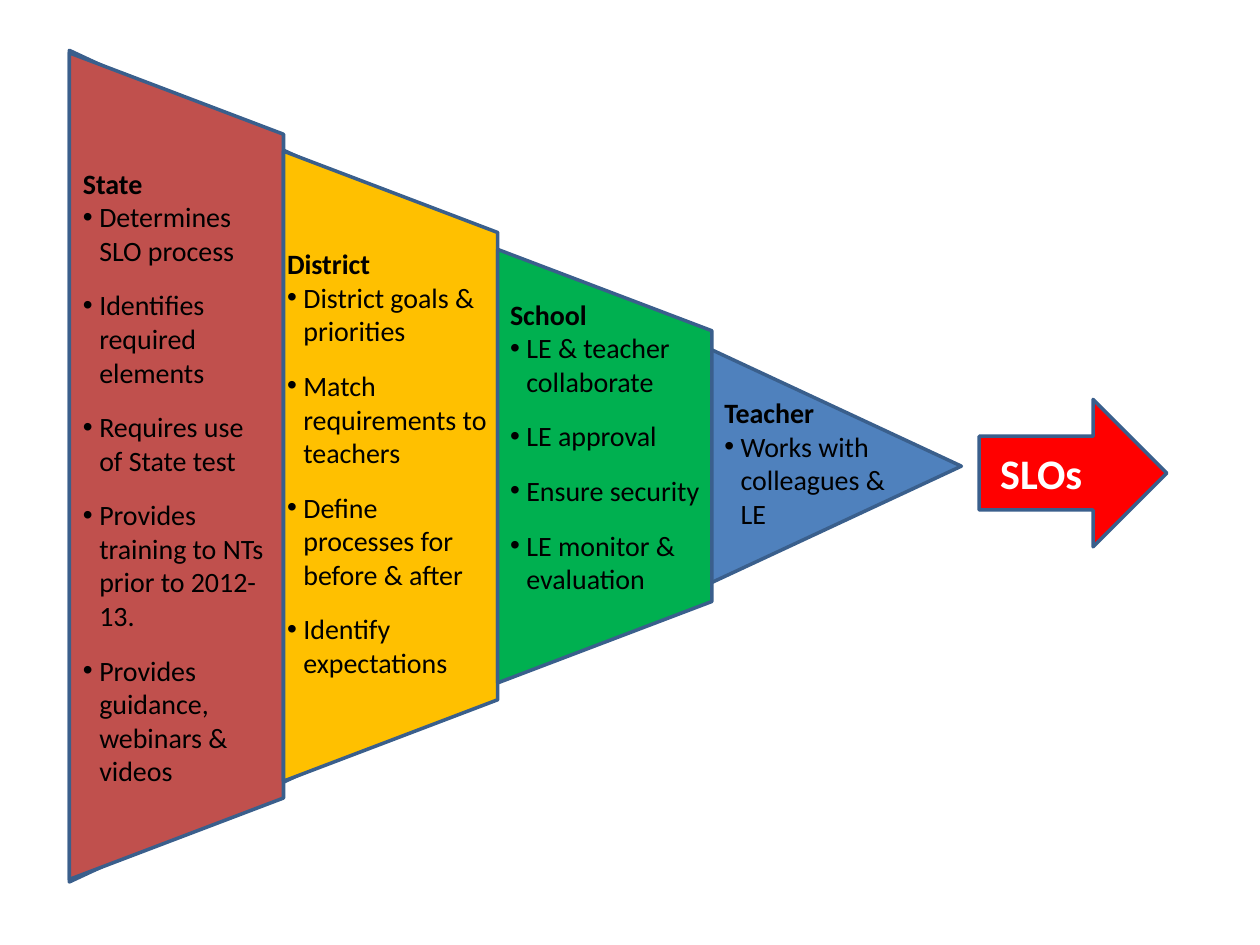
from lxml.etree import SubElement
from pptx import Presentation
from pptx.dml.color import RGBColor
from pptx.enum.shapes import MSO_SHAPE as Shape
from pptx.enum.text import MSO_AUTO_SIZE as AutoSize
from pptx.oxml.ns import qn
from pptx.util import Inches, Pt

BLACK = RGBColor(0x00, 0x00, 0x00)
WHITE = RGBColor(0xFF, 0xFF, 0xFF)
OUTLINE = RGBColor(0x3A, 0x5F, 0x8C)
BRICK = RGBColor(0xC0, 0x50, 0x4D)
AMBER = RGBColor(0xFF, 0xC0, 0x00)
GREEN = RGBColor(0x00, 0xB0, 0x50)
BLUE = RGBColor(0x4F, 0x81, 0xBD)
RED = RGBColor(0xFF, 0x00, 0x00)

COLUMNS, ROWS = 100, 75
FIRST_CENTRE, AXIS = 14, 37
STAGE_WIDTH, STAGE_HEIGHT, HEIGHT_STEP = 17, 65.6, 15.6

STAGES = [
    (BRICK, (5.6, 12.7, 17, 50.8), "State",
     ["Determines SLO process", "Identifies required elements",
      "Requires use of State test",
      "Provides training to NTs prior to 2012-13.",
      "Provides guidance, webinars & videos"]),
    (AMBER, (21.8, 19.1, 18.4, 35.7), "District",
     ["District goals & priorities", "Match requirements to teachers",
      "Define processes for before & after", "Identify expectations"]),
    (GREEN, (39.5, 23.1, 18, 27.6), "School",
     ["LE & teacher collaborate", "LE approval", "Ensure security",
      "LE monitor & evaluation"]),
    (None, (56.5, 30.9, 17, 16.2), "Teacher",
     ["Works with colleagues & LE"]),
]


def write(paragraph, text, size=16, color=BLACK, bold=False, bullet=False,
          after=0):
    if bullet:
        props = paragraph._p.get_or_add_pPr()
        props.set("marL", str(Inches(0.13)))
        props.set("indent", str(-Inches(0.13)))
        SubElement(props, qn("a:buFont")).set("typeface", "Arial")
        SubElement(props, qn("a:buChar")).set("char", "•")
    paragraph.space_after = Pt(after)
    run = paragraph.add_run()
    run.text = text
    run.font.name = "Calibri"
    run.font.size = Pt(size)
    run.font.bold = bold
    run.font.color.rgb = color


class FunnelSlide:
    def __init__(self, deck):
        self.slide = deck.slides.add_slide(deck.slide_layouts[6])
        self.column = deck.slide_width / COLUMNS
        self.row = deck.slide_height / ROWS

    def place(self, left, top, width, height):
        return (round(left * self.column), round(top * self.row),
                round(width * self.column), round(height * self.row))

    def outlined(self, preset, area, fill):
        shape = self.slide.shapes.add_shape(preset, *self.place(*area))
        shape.shadow.inherit = False
        shape.fill.solid()
        shape.fill.fore_color.rgb = fill
        shape.line.color.rgb = OUTLINE
        shape.line.width = Pt(2)
        return shape

    def sideways(self, preset, centre, height, width, fill):
        area = (centre - height / 2, AXIS - width / 2, height, width)
        shape = self.outlined(preset, area, fill)
        shape.rotation = 90
        return shape

    def band(self, index, fill):
        band = self.sideways(Shape.TRAPEZOID,
                             FIRST_CENTRE + index * STAGE_WIDTH,
                             STAGE_HEIGHT - index * HEIGHT_STEP,
                             STAGE_WIDTH, fill)
        band.adjustments[0] = 0.38

    def text(self, area, heading, points=(), **style):
        box = self.slide.shapes.add_textbox(*self.place(*area))
        frame = box.text_frame
        frame.word_wrap = True
        frame.auto_size = AutoSize.SHAPE_TO_FIT_TEXT
        write(frame.paragraphs[0], heading, bold=True, **style)
        for point in points:
            write(frame.add_paragraph(), point, bullet=True, after=12)


def main():
    deck = Presentation()
    deck.slide_width, deck.slide_height = Inches(10), Inches(7.5)
    funnel = FunnelSlide(deck)
    funnel.sideways(Shape.ISOSCELES_TRIANGLE, 40.9, 66, 70.8, BLUE)
    for index, (fill, *_) in enumerate(STAGES):
        if fill:
            funnel.band(index, fill)
    funnel.outlined(Shape.RIGHT_ARROW, (77.7, 31.7, 14.9, 11.7), RED)
    for _, area, heading, points in STAGES:
        funnel.text(area, heading, points)
    funnel.text((78.4, 35, 12, 5), "SLOs", size=24, color=WHITE)
    deck.save("out.pptx")


if __name__ == "__main__":
    main()
